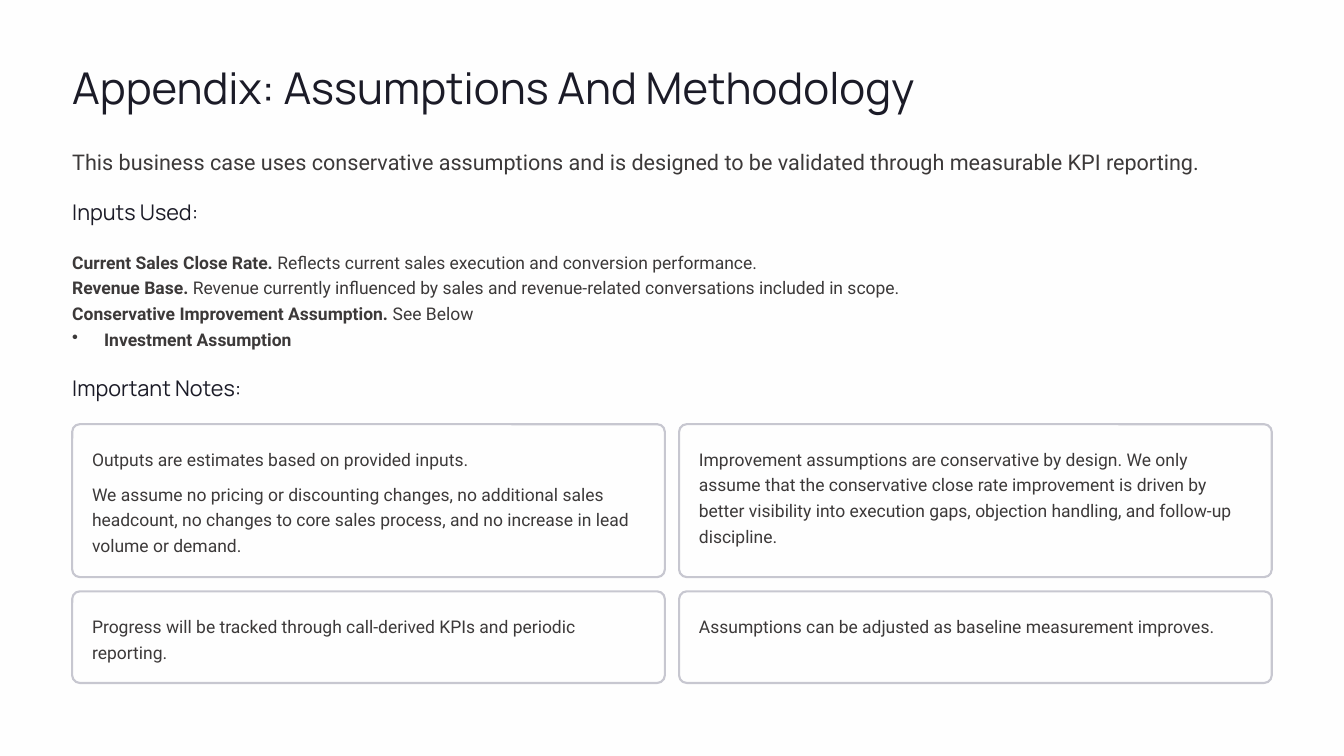
from dataclasses import dataclass

from lxml import etree
from pptx import Presentation
from pptx.dml.color import RGBColor
from pptx.enum import shapes, text
from pptx.oxml import ns
from pptx.util import Inches, Pt


@dataclass(frozen=True)
class Style:
    font: str
    size: float
    leading: float
    color: str


@dataclass(frozen=True)
class Theme:
    title = Style("Manrope", 37.5, 47, "1B1B27")
    lead = Style("Roboto", 18.5, 27.5, "3C3939")
    heading = Style("Manrope", 18.5, 23.5, "1B1B27")
    body = Style("Roboto", 15, 22, "3C3939")
    background = "FEFEFE"
    card_line = "C7C7D0"
    card_line_width = 1.8


THEME = Theme()
WIDTH, HEIGHT = 16, 9
MARGIN = 0.86
CONTENT_WIDTH = WIDTH - 2 * MARGIN
GAP = 0.17
CARD_WIDTH = (CONTENT_WIDTH - GAP) / 2
CARDS_TOP = 5.05
CARD_RADIUS = 0.09
CARD_INSET = 0.21
BULLET_INDENT = 0.38
PARAGRAPH_GAP = 8

INPUTS = [
    ("Current Sales Close Rate.", " Reflects current sales execution and conversion performance."),
    ("Revenue Base.", " Revenue currently influenced by sales and revenue-related conversations included in scope."),
    ("Conservative Improvement Assumption.", " See Below"),
    ("Investment Assumption", ""),
]

NOTE_ROWS = [
    (1.82, [
        ["Outputs are estimates based on provided inputs.",
         "We assume no pricing or discounting changes, no additional sales headcount, "
         "no changes to core sales process, and no increase in lead volume or demand."],
        ["Improvement assumptions are conservative by design. We only assume that the "
         "conservative close rate improvement is driven by better visibility into "
         "execution gaps, objection handling, and follow-up discipline."],
    ]),
    (1.09, [
        ["Progress will be tracked through call-derived KPIs and periodic reporting."],
        ["Assumptions can be adjusted as baseline measurement improves."],
    ]),
]


def set_frame(frame, inset=0):
    frame.word_wrap = True
    frame.vertical_anchor = text.MSO_ANCHOR.TOP
    frame.margin_left = frame.margin_right = Inches(inset)
    frame.margin_top = frame.margin_bottom = Inches(inset)


def style_paragraph(paragraph, style):
    paragraph.alignment = text.PP_ALIGN.LEFT
    paragraph.line_spacing = Pt(style.leading)
    paragraph.font.name = style.font
    paragraph.font.size = Pt(style.size)
    paragraph.font.color.rgb = RGBColor.from_string(style.color)


def add_paragraph(frame, index):
    return frame.add_paragraph() if index else frame.paragraphs[0]


def add_text_box(slide, top, height):
    shape = slide.shapes.add_textbox(
        Inches(MARGIN), Inches(top), Inches(CONTENT_WIDTH), Inches(height))
    set_frame(shape.text_frame)
    return shape.text_frame


def add_line(slide, top, height, words, style):
    paragraph = add_text_box(slide, top, height).paragraphs[0]
    paragraph.text = words
    style_paragraph(paragraph, style)


def add_bullet(paragraph):
    properties = paragraph._p.get_or_add_pPr()
    properties.set("marL", str(Inches(BULLET_INDENT)))
    properties.set("indent", str(-Inches(BULLET_INDENT)))
    etree.SubElement(properties, ns.qn("a:buChar"), char="•")


def add_inputs(slide, top, height):
    frame = add_text_box(slide, top, height)
    for index, (label, detail) in enumerate(INPUTS):
        paragraph = add_paragraph(frame, index)
        if not detail:
            add_bullet(paragraph)
        style_paragraph(paragraph, THEME.body)
        label_run = paragraph.add_run()
        label_run.text = label
        label_run.font.bold = True
        if detail:
            paragraph.add_run().text = detail


def add_card(slide, left, top, height, notes):
    card = slide.shapes.add_shape(
        shapes.MSO_SHAPE.ROUNDED_RECTANGLE,
        Inches(left), Inches(top), Inches(CARD_WIDTH), Inches(height))
    card.adjustments[0] = CARD_RADIUS / height
    card.shadow.inherit = False
    card.fill.solid()
    card.fill.fore_color.rgb = RGBColor.from_string(THEME.background)
    card.line.color.rgb = RGBColor.from_string(THEME.card_line)
    card.line.width = Pt(THEME.card_line_width)
    set_frame(card.text_frame, CARD_INSET)
    for index, note in enumerate(notes):
        paragraph = add_paragraph(card.text_frame, index)
        paragraph.text = note
        style_paragraph(paragraph, THEME.body)
        if index:
            paragraph.space_before = Pt(PARAGRAPH_GAP)


def add_notes(slide):
    top = CARDS_TOP
    for height, row in NOTE_ROWS:
        for column, notes in enumerate(row):
            add_card(slide, MARGIN + column * (CARD_WIDTH + GAP), top, height, notes)
        top += height + GAP


def main():
    presentation = Presentation()
    presentation.slide_width, presentation.slide_height = Inches(WIDTH), Inches(HEIGHT)
    slide = presentation.slides.add_slide(presentation.slide_layouts[6])
    slide.background.fill.solid()
    slide.background.fill.fore_color.rgb = RGBColor.from_string(THEME.background)

    add_line(slide, 0.69, 0.66, "Appendix: Assumptions And Methodology", THEME.title)
    add_line(slide, 1.7, 0.39,
             "This business case uses conservative assumptions and is designed "
             "to be validated through measurable KPI reporting.", THEME.lead)
    add_line(slide, 2.35, 0.33, "Inputs Used:", THEME.heading)
    add_inputs(slide, 2.94, 1.24)
    add_line(slide, 4.45, 0.33, "Important Notes:", THEME.heading)
    add_notes(slide)
    presentation.save("out.pptx")


if __name__ == "__main__":
    main()
